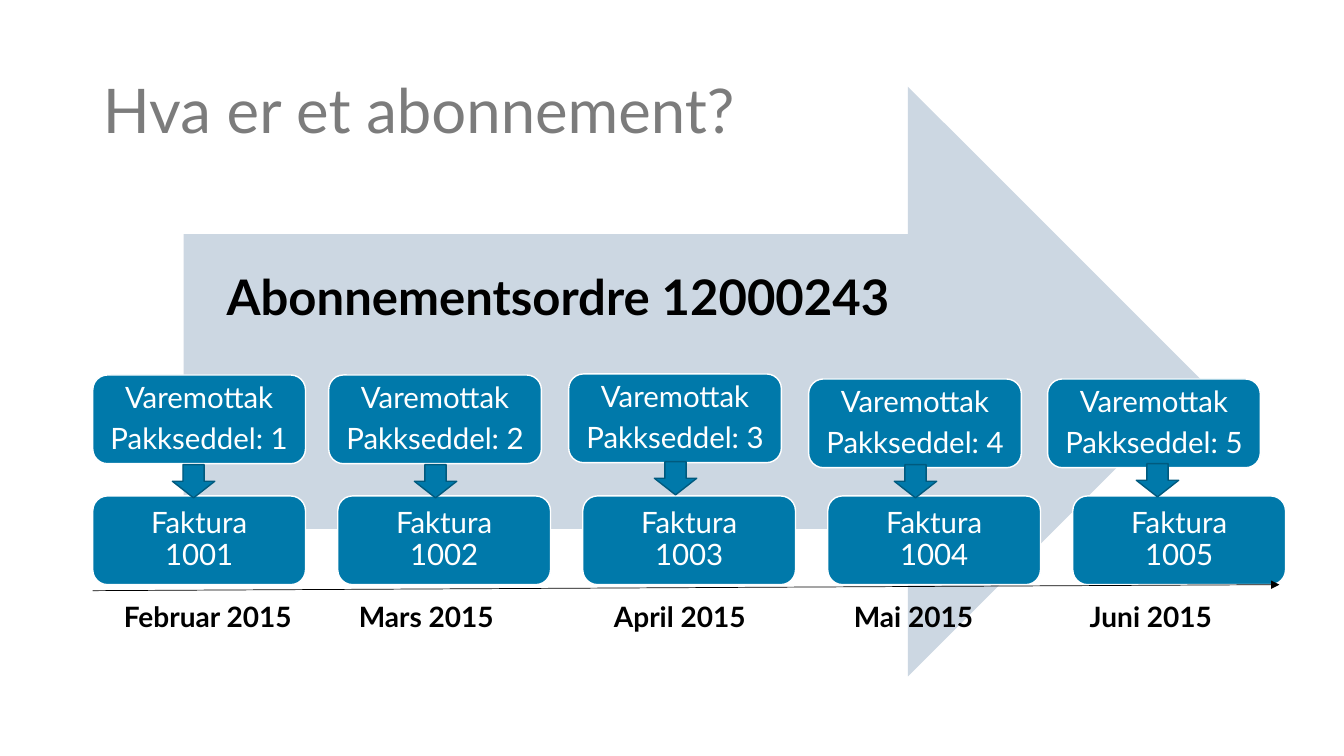
import dataclasses

import pptx
import pptx.dml.color
import pptx.enum.shapes
import pptx.enum.text
import pptx.oxml.ns
import pptx.util
from lxml import etree

SHAPES = pptx.enum.shapes.MSO_SHAPE
ALIGN = pptx.enum.text.PP_ALIGN
ANCHOR = pptx.enum.text.MSO_ANCHOR
AUTO_SIZE = pptx.enum.text.MSO_AUTO_SIZE
EMU_PER_PX = 9144


@dataclasses.dataclass(frozen=True)
class Theme:
    font: str = "Lato"
    title: str = "7C7C7C"
    text: str = "000000"
    light: str = "FFFFFF"
    band: str = "CCD7E2"
    box: str = "0079AA"
    box_edge: str = "005A7E"
    title_size: int = 44
    order_size: int = 35
    box_size: int = 21
    month_size: int = 20


@dataclasses.dataclass(frozen=True)
class Delivery:
    number: int
    month: str
    month_left: int
    month_width: int
    receipt_left: int
    receipt_top: int
    arrow_left: int
    arrow_top: int


DELIVERIES = [
    Delivery(1, "Februar 2015", 113, 202, 92, 372, 171, 461),
    Delivery(2, "Mars 2015", 346, 162, 326, 372, 411, 461),
    Delivery(3, "April 2015", 599, 159, 564, 371, 649, 458),
    Delivery(4, "Mai 2015", 837, 144, 802, 376, 887, 461),
    Delivery(5, "Juni 2015", 1071, 154, 1039, 376, 1127, 460),
]
INVOICE_LEFT, INVOICE_TOP, INVOICE_PITCH = 92, 492, 243
BOX_WIDTH, BOX_HEIGHT = 211, 88


def px(*lengths):
    return [pptx.util.Emu(length * EMU_PER_PX) for length in lengths]


def rgb(value):
    return pptx.dml.color.RGBColor.from_string(value)


class SlideBuilder:
    def __init__(self, slide, theme):
        self.slide = slide
        self.theme = theme

    def add_run(self, paragraph, text, size, color, bold=False):
        run = paragraph.add_run()
        run.text = text
        run.font.name = self.theme.font
        run.font.size = pptx.util.Pt(size)
        run.font.color.rgb = rgb(color)
        run.font.bold = bold

    def title(self, text, left, top, width, height):
        shape = self.slide.shapes.title
        shape.left, shape.top, shape.width, shape.height = px(left, top, width, height)
        frame = shape.text_frame
        frame.auto_size = AUTO_SIZE.NONE
        frame.vertical_anchor = ANCHOR.MIDDLE
        paragraph = frame.paragraphs[0]
        paragraph.alignment = ALIGN.LEFT
        paragraph.line_spacing = 0.9
        self.add_run(paragraph, text, self.theme.title_size, self.theme.title)

    def shape(self, kind, left, top, width, height, fill, edge=None):
        shape = self.slide.shapes.add_shape(kind, *px(left, top, width, height))
        shape.shadow.inherit = False
        shape.fill.solid()
        shape.fill.fore_color.rgb = rgb(fill)
        if edge:
            shape.line.color.rgb = rgb(edge)
            shape.line.width = pptx.util.Pt(1)
        else:
            shape.line.fill.background()
        return shape

    def box(self, left, top, paragraphs):
        theme = self.theme
        shape = self.shape(SHAPES.ROUNDED_RECTANGLE, left, top,
                           BOX_WIDTH, BOX_HEIGHT, theme.box, theme.light)
        frame = shape.text_frame
        frame.word_wrap = True
        frame.vertical_anchor = ANCHOR.MIDDLE
        frame.margin_left, frame.margin_right = px(13, 13)
        frame.margin_top, frame.margin_bottom = px(9, 9)
        for index, lines in enumerate(paragraphs):
            paragraph = frame.add_paragraph() if index else frame.paragraphs[0]
            paragraph.alignment = ALIGN.CENTER
            paragraph.line_spacing = 0.9
            if index < len(paragraphs) - 1:
                paragraph.space_after = pptx.util.Pt(7)
            for position, line in enumerate(lines):
                if position:
                    paragraph.add_line_break()
                self.add_run(paragraph, line, theme.box_size, theme.light)

    def label(self, text, left, top, width, height, size, wrap):
        shape = self.slide.shapes.add_textbox(*px(left, top, width, height))
        frame = shape.text_frame
        frame.word_wrap = wrap
        frame.auto_size = AUTO_SIZE.SHAPE_TO_FIT_TEXT
        self.add_run(frame.paragraphs[0], text, size, self.theme.text, bold=True)

    def timeline(self, left, start_top, right, end_top):
        connector = self.slide.shapes.add_connector(
            pptx.enum.shapes.MSO_CONNECTOR.STRAIGHT, *px(left, start_top, right, end_top))
        connector.line.color.rgb = rgb(self.theme.text)
        connector.line.width = pptx.util.Pt(0.5)
        qn = pptx.oxml.ns.qn
        properties = connector.element.spPr
        etree.SubElement(properties.find(qn("a:ln")), qn("a:tailEnd"), type="triangle")
        etree.SubElement(properties, qn("a:effectLst"))


def main():
    presentation = pptx.Presentation()
    presentation.slide_width, presentation.slide_height = px(1333, 750)
    theme = Theme()
    slide = presentation.slides.add_slide(presentation.slide_layouts[5])
    builder = SlideBuilder(slide, theme)

    builder.title("Hva er et abonnement?", 92, 40, 1150, 145)
    builder.shape(SHAPES.RIGHT_ARROW, 182, 86, 1011, 585, theme.band)
    for index, delivery in enumerate(DELIVERIES):
        builder.box(INVOICE_LEFT + index * INVOICE_PITCH, INVOICE_TOP,
                    [["Faktura", str(1000 + delivery.number)]])
    builder.label("Abonnementsordre 12000243", 215, 259, 856, 69, theme.order_size, True)
    builder.timeline(92, 586, 1269, 580)
    for delivery in DELIVERIES:
        builder.label(delivery.month, delivery.month_left, 590,
                      delivery.month_width, 44, theme.month_size, False)
        builder.box(delivery.receipt_left, delivery.receipt_top,
                    [["Varemottak"], [f"Pakkseddel: {delivery.number}"]])
        builder.shape(SHAPES.DOWN_ARROW, delivery.arrow_left, delivery.arrow_top,
                      42, 33, theme.box, theme.box_edge)

    presentation.save("out.pptx")


if __name__ == "__main__":
    main()
